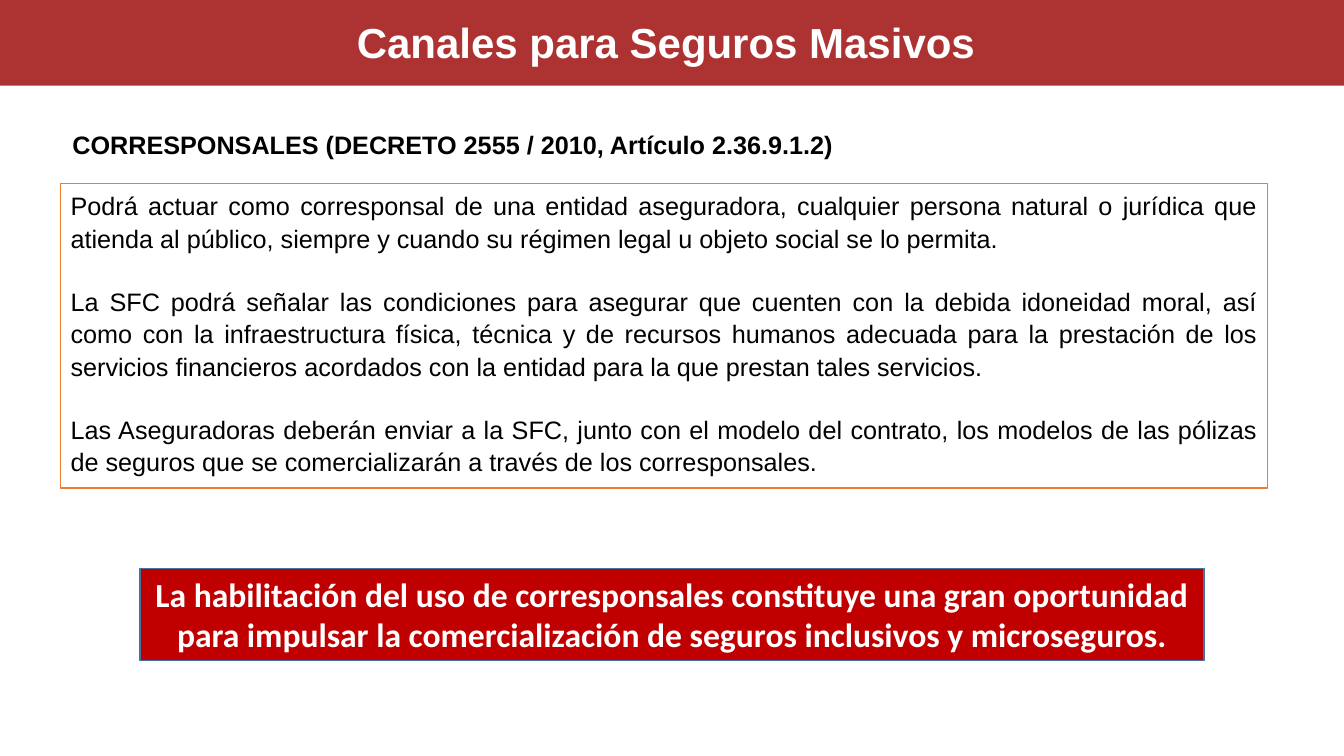
from pptx import Presentation
from pptx.dml.color import RGBColor
from pptx.enum import shapes, text
from pptx.oxml import xmlchemy
from pptx.util import Inches, Pt

BLACK = RGBColor(0x00, 0x00, 0x00)
WHITE = RGBColor(0xFF, 0xFF, 0xFF)
BRICK = RGBColor(0xAD, 0x33, 0x33)
RED = RGBColor(0xC0, 0x00, 0x00)
ORANGE = RGBColor(0xED, 0x7D, 0x31)
BLUE = RGBColor(0x43, 0x73, 0x9E)

HEADING = "Canales para Seguros Masivos "
DECREE = "CORRESPONSALES (DECRETO 2555 / 2010, Artículo 2.36.9.1.2)"
RULES = [
    "Podrá actuar como corresponsal de una entidad aseguradora, cualquier persona natural o jurídica que "
    "atienda al público, siempre y cuando su régimen legal u objeto social se lo permita.",
    "La SFC podrá señalar las condiciones para asegurar que cuenten con la debida idoneidad moral, así como "
    "con la infraestructura física, técnica y de recursos humanos adecuada para la prestación de los "
    "servicios financieros acordados con la entidad para la que prestan tales servicios.",
    "Las Aseguradoras deberán enviar a la SFC, junto con el modelo del contrato, los modelos de las pólizas "
    "de seguros que se comercializarán a través de los corresponsales.",
]
CONCLUSION = (
    "La habilitación del uso de corresponsales constituye una gran oportunidad para impulsar la "
    "comercialización de seguros inclusivos y microseguros."
)

HEADING_BOX = (0, -0.02, 13.33, 0.87)
DECREE_BOX = (0.62, 1.23, 7.8, 0.4)
RULES_BOX = (0.6, 1.82, 11.97, 3.02)
CONCLUSION_BOX = (1.39, 5.64, 10.55, 0.91)

LINE_SPACING = 1.07
RULE_GAP = Pt(22.1)


def place(part, box):
    part.left, part.top, part.width, part.height = map(Inches, box)


def paint(part, fill, line=None):
    part.fill.solid()
    part.fill.fore_color.rgb = fill
    if line is None:
        part.line.fill.background()
    else:
        part.line.color.rgb = line
        part.line.width = Pt(1)


def write(part, wording, size, color, align, bold=True, font="Arial", anchor=text.MSO_ANCHOR.TOP):
    frame = part.text_frame
    frame.text = wording
    frame.word_wrap = True
    frame.auto_size = text.MSO_AUTO_SIZE.NONE
    frame.vertical_anchor = anchor
    for paragraph in frame.paragraphs:
        paragraph.alignment = align
        for run in paragraph.runs:
            run.font.name = font
            run.font.size = Pt(size)
            run.font.bold = bold
            run.font.color.rgb = color


def space_rules(paragraphs):
    for index, paragraph in enumerate(paragraphs):
        paragraph.line_spacing = LINE_SPACING
        paragraph.space_before = RULE_GAP if index else Pt(0)
        properties = paragraph._p.get_or_add_pPr()
        properties.set("marL", "0")
        properties.set("indent", "0")
        properties.append(xmlchemy.OxmlElement("a:buNone"))


def main():
    deck = Presentation()
    deck.slide_width, deck.slide_height = Inches(13.33), Inches(7.5)
    slide = deck.slides.add_slide(deck.slide_layouts[1])

    heading = slide.shapes.title
    place(heading, HEADING_BOX)
    paint(heading, BRICK)
    write(heading, HEADING, 30, WHITE, text.PP_ALIGN.CENTER, anchor=text.MSO_ANCHOR.MIDDLE)

    decree = slide.shapes.add_textbox(*map(Inches, DECREE_BOX))
    write(decree, DECREE, 18, BLACK, text.PP_ALIGN.LEFT)

    rules = slide.placeholders[1]
    place(rules, RULES_BOX)
    paint(rules, WHITE, ORANGE)
    write(rules, "\n".join(RULES), 18, BLACK, text.PP_ALIGN.JUSTIFY, bold=False)
    space_rules(rules.text_frame.paragraphs)

    conclusion = slide.shapes.add_shape(shapes.MSO_SHAPE.RECTANGLE, *map(Inches, CONCLUSION_BOX))
    conclusion.shadow.inherit = False
    paint(conclusion, RED, BLUE)
    write(conclusion, CONCLUSION, 24, WHITE, text.PP_ALIGN.CENTER, font="Calibri")

    deck.save("out.pptx")


if __name__ == "__main__":
    main()
